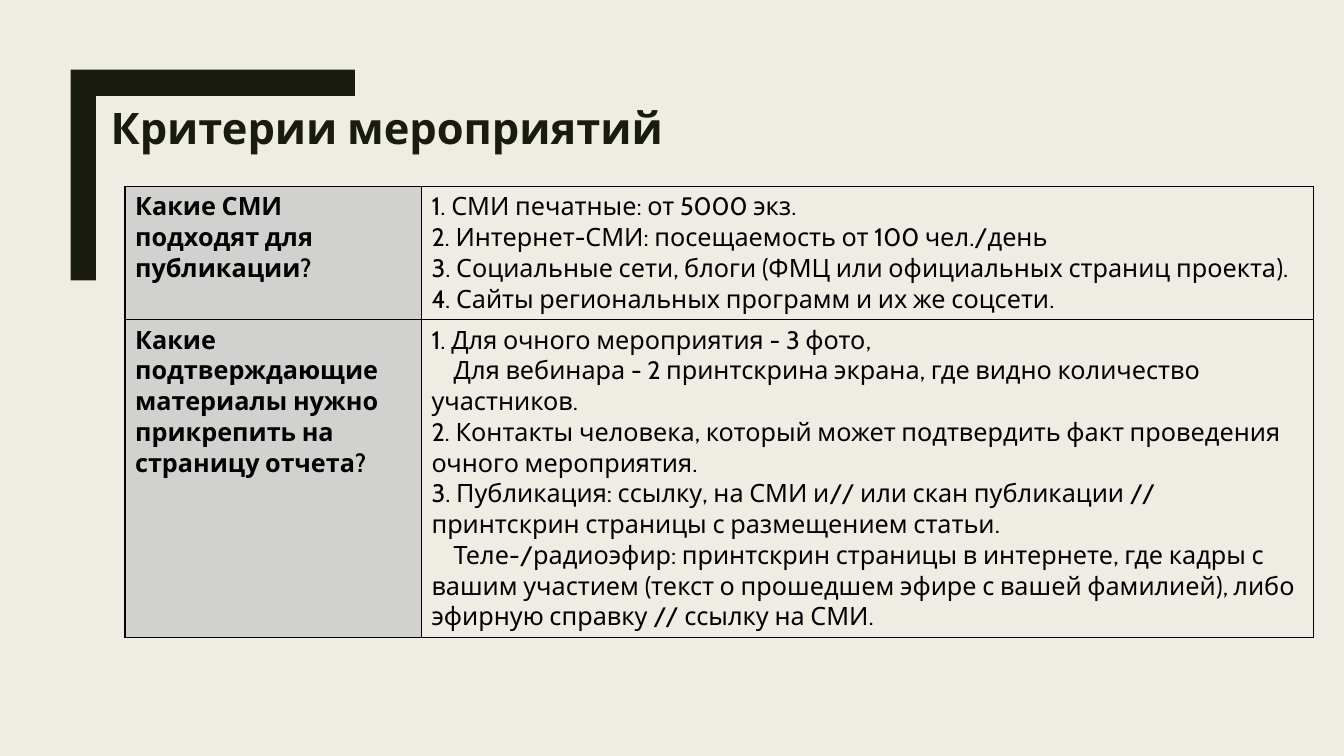
from lxml import etree
from pptx import Presentation
from pptx.dml.color import RGBColor
from pptx.enum.text import MSO_ANCHOR, PP_ALIGN
from pptx.oxml.ns import qn
from pptx.util import Inches, Pt

TOP = MSO_ANCHOR.TOP
LEFT = PP_ALIGN.LEFT

COLORS = {
    "background": "EFEDE3",
    "accent": "191B0E",
    "text": "000000",
    "border": "000000",
    "question": "D1D1CF",
}
INDENT = 0.22

CRITERIA = [
    (
        "Какие СМИ подходят для публикации?",
        [
            ("1. СМИ печатные: от 5000 экз.", 0),
            ("2. Интернет-СМИ: посещаемость от 100 чел./день", 0),
            ("3. Социальные сети, блоги (ФМЦ или официальных страниц проекта).", 0),
            ("4. Сайты региональных программ и их же соцсети.", 0),
        ],
    ),
    (
        "Какие подтверждающие материалы нужно прикрепить на страницу отчета?",
        [
            ("1. Для очного мероприятия - 3 фото,", 0),
            ("Для вебинара - 2 принтскрина экрана, где видно количество участников.", INDENT),
            ("2. Контакты человека, который может подтвердить факт проведения "
             "очного мероприятия.", 0),
            ("3. Публикация: ссылку, на СМИ и// или скан публикации // "
             "принтскрин страницы с размещением статьи.", 0),
            ("Теле-/радиоэфир: принтскрин страницы в интернете, где кадры с вашим "
             "участием (текст о прошедшем эфире с вашей фамилией), либо эфирную "
             "справку // ссылку на СМИ.", INDENT),
        ],
    ),
]


class SlideBuilder:
    font = "Cabin"

    def __init__(self, slide):
        self.slide = slide
        self.paint(slide.background.fill, "background")

    def paint(self, fill, color):
        fill.solid()
        fill.fore_color.rgb = RGBColor.from_string(COLORS[color])

    def add_lines(self, frame, lines, size, color, bold=False, spacing=None):
        frame.word_wrap = True
        for number, (text, indent) in enumerate(lines):
            paragraph = frame.add_paragraph() if number else frame.paragraphs[0]
            paragraph.alignment = LEFT
            if spacing:
                paragraph.line_spacing = spacing
            if indent:
                paragraph._p.get_or_add_pPr().set("indent", str(Inches(indent)))
            run = paragraph.add_run()
            run.text = text
            run.font.name = self.font
            run.font.size = Pt(size)
            run.font.bold = bold
            run.font.color.rgb = RGBColor.from_string(COLORS[color])

    def title(self, text, left, top, width, height):
        box = self.slide.shapes.add_textbox(
            Inches(left), Inches(top), Inches(width), Inches(height))
        box.text_frame.vertical_anchor = TOP
        self.add_lines(box.text_frame, [(text, 0)], 31, "accent", True, 0.89)

    def outline(self, points, color):
        start, *rest = [(Inches(x), Inches(y)) for x, y in points]
        builder = self.slide.shapes.build_freeform(*start)
        builder.add_line_segments(rest, close=True)
        shape = builder.convert_to_shape()
        shape.shadow.inherit = False
        self.paint(shape.fill, color)
        shape.line.fill.background()

    def border(self, cell):
        properties = cell._tc.get_or_add_tcPr()
        for side in ("lnL", "lnR", "lnT", "lnB"):
            line = etree.SubElement(properties, qn(f"a:{side}"), w=str(Pt(1)))
            fill = etree.SubElement(line, qn("a:solidFill"))
            etree.SubElement(fill, qn("a:srgbClr"), val=COLORS["border"])

    def criteria_table(self, criteria, left, top, widths, heights):
        table = self.slide.shapes.add_table(
            len(heights), len(widths), Inches(left), Inches(top),
            Inches(sum(widths)), Inches(sum(heights))).table
        table.first_row = False
        table.horz_banding = False
        for column, width in zip(table.columns, widths):
            column.width = Inches(width)
        for row, height, (question, answers) in zip(table.rows, heights, criteria):
            row.height = Inches(height)
            question_cell, answer_cell = row.cells
            for cell in row.cells:
                self.border(cell)
            self.paint(question_cell.fill, "question")
            answer_cell.fill.background()
            self.add_lines(question_cell.text_frame, [(question, 0)], 18, "text", True)
            self.add_lines(answer_cell.text_frame, answers, 18, "text")


def main():
    presentation = Presentation()
    presentation.slide_width = Inches(13.33)
    presentation.slide_height = Inches(7.5)
    slide = presentation.slides.add_slide(presentation.slide_layouts[6])
    builder = SlideBuilder(slide)
    builder.criteria_table(CRITERIA, 1.24, 1.85, [2.94, 8.85], [1.32, 3.15])
    builder.title("Критерии мероприятий", 1, 1.02, 12.33, 0.83)
    builder.outline(
        [(3.52, 0.95), (3.52, 0.69), (0.7, 0.69),
         (0.7, 2.78), (0.95, 2.78), (0.95, 0.95)], "accent")
    presentation.save("out.pptx")


if __name__ == "__main__":
    main()
